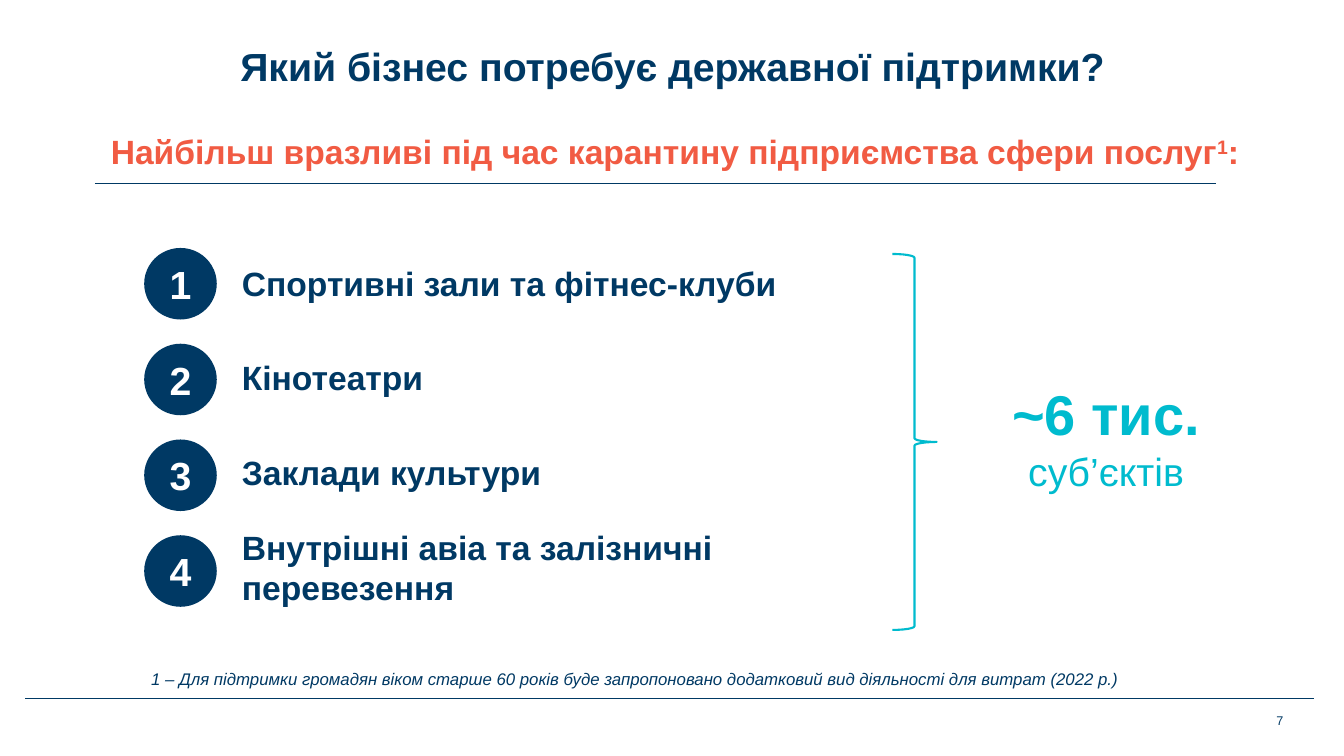
from pptx import Presentation
from pptx.dml.color import RGBColor
from pptx.enum.shapes import MSO_CONNECTOR, MSO_SHAPE
from pptx.enum.text import MSO_ANCHOR, MSO_AUTO_SIZE, PP_ALIGN
from pptx.oxml.ns import qn
from pptx.util import Pt
from lxml.etree import SubElement

PX = 9144
COLORS = {"navy": "003964", "cyan": "00BBCE", "coral": "F15B43", "white": "FFFFFF"}
CENTERED = {"alignment": PP_ALIGN.CENTER}
MIDDLE = {"vertical_anchor": MSO_ANCHOR.MIDDLE, "word_wrap": True}
TOP = {"vertical_anchor": MSO_ANCHOR.TOP, "word_wrap": True}
ONE_LINE = {"word_wrap": False, "auto_size": MSO_AUTO_SIZE.SHAPE_TO_FIT_TEXT}


def apply(target, formats):
    for attribute, value in formats.items():
        setattr(target, attribute, value)


class SlideBuilder:
    font_name = "Arial"

    def __init__(self, slide):
        self.slide = slide

    def color(self, name):
        return RGBColor.from_string(COLORS[name])

    def box(self, *lengths):
        return [length * PX for length in lengths]

    def fill_text(self, holder, runs, color, frame=MIDDLE, paragraph=CENTERED):
        apply(holder.text_frame, frame)
        line = holder.text_frame.paragraphs[0]
        apply(line, paragraph)
        for words, size, formats in runs:
            run = line.add_run()
            run.text = words
            apply(run.font, {"name": self.font_name, "size": Pt(size), **formats})
            run.font.color.rgb = self.color(color)
        return line

    def title(self, place, words):
        heading = self.slide.shapes.title
        apply(heading, dict(zip(("left", "top", "width", "height"), self.box(*place))))
        self.fill_text(heading, [(words, 28, {"bold": True})], "navy",
                       paragraph={**CENTERED, "line_spacing": 0.9})

    def text(self, place, runs, color="navy", frame=MIDDLE, paragraph=CENTERED):
        holder = self.slide.shapes.add_textbox(*self.box(*place))
        return self.fill_text(holder, runs, color, frame, paragraph)

    def rule(self, left, right, y, width):
        line = self.slide.shapes.add_connector(
            MSO_CONNECTOR.STRAIGHT, *self.box(left, y, right, y))
        line.line.color.rgb = self.color("navy")
        line.line.width = Pt(width)
        SubElement(line._element.spPr, qn("a:effectLst"))

    def badge(self, place, number):
        circle = self.slide.shapes.add_shape(MSO_SHAPE.OVAL, *self.box(*place))
        circle.shadow.inherit = False
        circle.fill.solid()
        circle.fill.fore_color.rgb = self.color("navy")
        circle.line.fill.background()
        self.fill_text(circle, [(str(number), 28, {"bold": True})], "white")

    def brace(self, place):
        bracket = self.slide.shapes.add_shape(MSO_SHAPE.RIGHT_BRACE, *self.box(*place))
        bracket.shadow.inherit = False
        bracket.fill.background()
        bracket.line.color.rgb = self.color("cyan")
        bracket.line.width = Pt(1.5)


def main():
    prs = Presentation()
    apply(prs, {"slide_width": 1333 * PX, "slide_height": 750 * PX})
    page = SlideBuilder(prs.slides.add_slide(prs.slide_layouts[5]))

    page.rule(25, 1303, 693, 0.5)
    page.title((52, 19, 1230, 99), "Який бізнес потребує державної підтримки?")
    page.text((1236, 698, 67, 33), [("7", 9, {})])

    subtitle = page.text(
        (100, 125, 1158, 51),
        [("Найбільш вразливі під час карантину підприємства сфери послуг", 24, {"bold": True}),
         ("1", 24, {"bold": True}),
         (":", 24, {"bold": True})],
        "coral", ONE_LINE, {"alignment": PP_ALIGN.LEFT})
    subtitle.runs[1].font._element.set("baseline", "30000")
    page.rule(94, 1206, 182, 1)

    sectors = ["Спортивні зали та фітнес-клуби", "Кінотеатри", "Заклади культури",
               "Внутрішні авіа та залізничні перевезення"]
    for index, sector in enumerate(sectors):
        page.badge((143, 246 + 95 * index, 72, 71), index + 1)
        page.text((230, 240 + 94 * index, 642, 81), [(sector, 24, {"bold": True})],
                  paragraph={"alignment": PP_ALIGN.LEFT})

    page.brace((885, 252, 44, 373))
    page.text((929, 372, 336, 84),
              [("~6 тис. ", 40, {"bold": True}), ("суб’єктів", 28, {"bold": False})],
              "cyan", TOP)
    page.text((140, 659, 988, 30),
              [("1 – Для підтримки громадян віком старше 60 років буде запропоновано "
                "додатковий вид діяльності для витрат (2022 р.)", 12, {"italic": True})],
              frame=ONE_LINE, paragraph={"alignment": PP_ALIGN.LEFT})

    prs.save("out.pptx")


if __name__ == "__main__":
    main()
